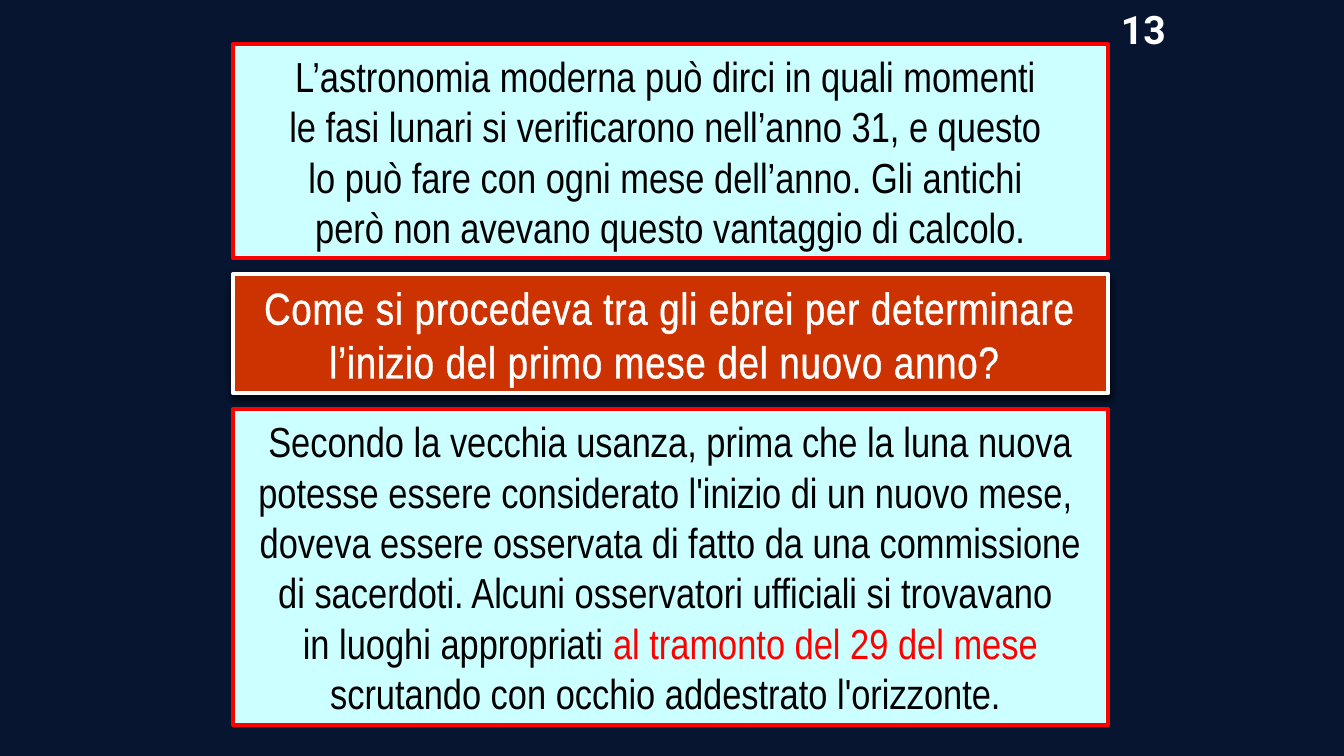
from lxml import etree
from pptx import Presentation
from pptx import util as u
from pptx.dml.color import RGBColor
from pptx.enum import shapes, text
from pptx.oxml.ns import qn

NAVY, CYAN, RED, RUST = "071531", "CCFFFF", "FF0000", "CC3300"
BLACK, WHITE = "000000", "FFFFFF"
LEFT, WIDTH = 2.31, 8.68


def color(value):
    return RGBColor.from_string(value)


def paint(parent, value):
    """Add a solid fill under an XML element and return its colour node."""
    fill = etree.SubElement(parent, qn("a:solidFill"))
    return etree.SubElement(fill, qn("a:srgbClr"), val=value)


class Deck:
    plain = {"name": "Arial Narrow", "size": u.Pt(30)}
    ask = {"name": "Arial Narrow", "size": u.Pt(32)}
    count = {"name": "Roboto", "size": u.Pt(28), "bold": True}

    def __init__(self):
        self.prs = Presentation()
        self.prs.slide_width = u.Inches(13.33)
        self.prs.slide_height = u.Inches(7.5)
        self.slide = self.prs.slides.add_slide(self.prs.slide_layouts[6])
        back = self.slide.background.fill
        back.solid()
        back.fore_color.rgb = color(NAVY)

    def letter(self, shape, lines, style, wrap=True, edge=0, gap=0):
        """Fill a shape with centred lines, each a list of (words, colour)."""
        frame = shape.text_frame
        frame.word_wrap = wrap
        frame.auto_size = text.MSO_AUTO_SIZE.SHAPE_TO_FIT_TEXT
        for i, line in enumerate(lines):
            para = frame.add_paragraph() if i else frame.paragraphs[0]
            para.alignment = text.PP_ALIGN.CENTER
            for words, tone in line:
                run = para.add_run()
                run.text = words
                for key, value in style.items():
                    setattr(run.font, key, value)
                run.font.color.rgb = color(tone)
                props = run._r.get_or_add_rPr()
                if gap:
                    props.set("spc", str(int(gap * 100)))
                if edge:
                    rim = etree.Element(qn("a:ln"), w=str(u.Pt(edge)))
                    paint(rim, tone)
                    props.insert(0, rim)

    def label(self, x, y, w, h, words, style, tone):
        box = self.slide.shapes.add_textbox(*map(u.Inches, (x, y, w, h)))
        self.letter(box, [[(words, tone)]], style, wrap=False)

    def panel(self, y, h, fill, rim, lines, style, **extra):
        box = self.slide.shapes.add_shape(
            shapes.MSO_SHAPE.RECTANGLE, *map(u.Inches, (LEFT, y, WIDTH, h)))
        box.shadow.inherit = False
        box.fill.solid()
        box.fill.fore_color.rgb = color(fill)
        box.line.color.rgb = color(rim)
        box.line.width = u.Pt(3)
        self.letter(box, lines, style, **extra)
        return box

    def shade(self, box):
        """Give a box a soft shadow below it."""
        glow = box._element.spPr.find(qn("a:effectLst"))
        cast = etree.SubElement(
            glow, qn("a:outerShdw"), blurRad=str(u.Pt(5)), dist=str(u.Pt(3)),
            dir="5400000", algn="ctr", rotWithShape="0")
        tint = etree.SubElement(cast, qn("a:srgbClr"), val=BLACK)
        etree.SubElement(tint, qn("a:alpha"), val="65000")


def main():
    deck = Deck()
    deck.label(10.99, 0, 0.7, 0.57, "13", deck.count, WHITE)
    moon = [
        "L’astronomia moderna può dirci in quali momenti ",
        "le fasi lunari si verificarono nell’anno 31, e questo ",
        "lo può fare con ogni mese dell’anno. Gli antichi ",
        "però non avevano questo vantaggio di calcolo.",
    ]
    deck.panel(0.44, 2.12, CYAN, RED, [[(line, BLACK)] for line in moon],
               deck.plain, edge=0.75)
    custom = [
        [("Secondo la vecchia usanza, prima che la luna nuova potesse "
          "essere considerato l'inizio di un nuovo mese, ", BLACK)],
        [("doveva essere osservata di fatto da una commissione di "
          "sacerdoti. Alcuni osservatori ufficiali si trovavano ", BLACK)],
        [("in luoghi appropriati ", BLACK),
         ("al tramonto del 29 del mese ", RED),
         ("scrutando con occhio addestrato l'orizzonte. ", BLACK)],
    ]
    deck.panel(4.06, 3.13, CYAN, RED, custom, deck.plain, edge=0.75)
    query = ("Come si procedeva tra gli ebrei per determinare "
             "l’inizio del primo mese del nuovo anno? ")
    box = deck.panel(2.72, 1.18, RUST, WHITE, [[(query, WHITE)]], deck.ask,
                     edge=1.25, gap=0.5)
    deck.shade(box)
    deck.prs.save("out.pptx")


if __name__ == "__main__":
    main()
